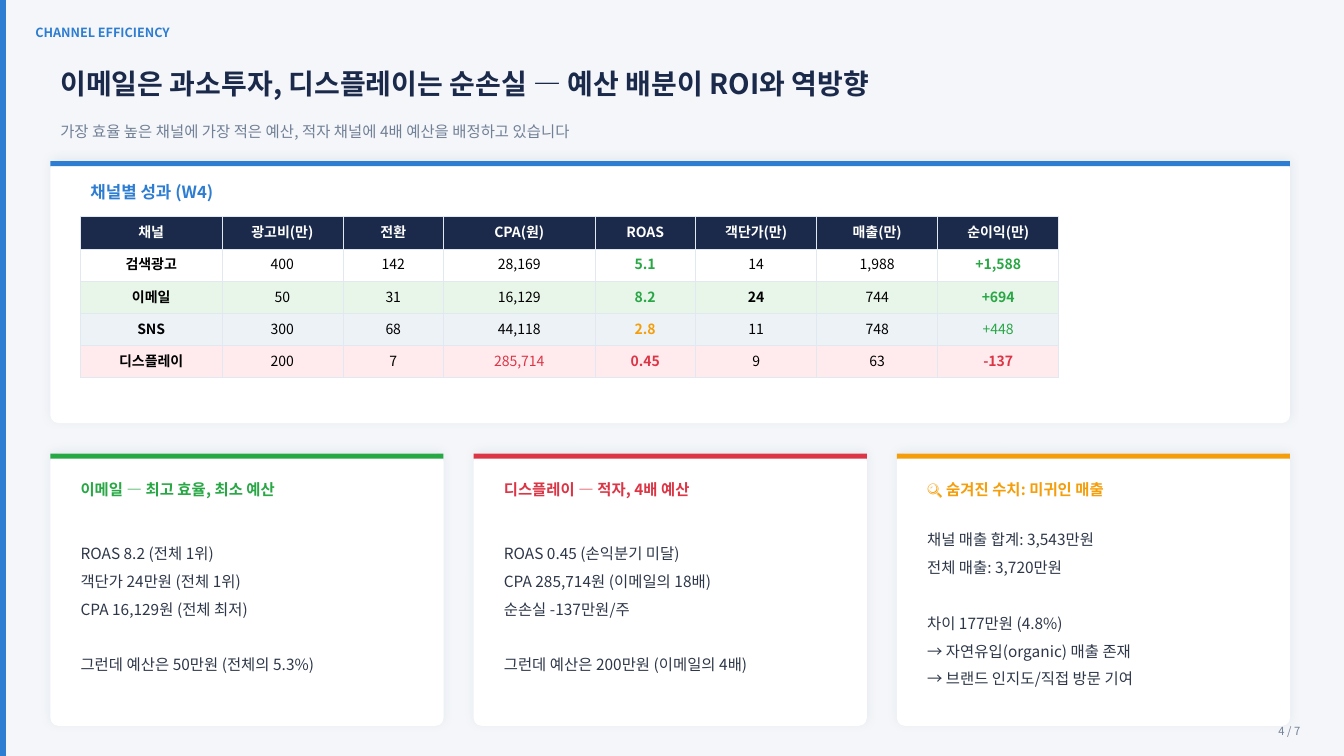
from lxml import etree
from pptx import Presentation
from pptx.dml.color import RGBColor
from pptx.enum.shapes import MSO_SHAPE
from pptx.enum.text import MSO_ANCHOR, PP_ALIGN
from pptx.oxml.ns import qn
from pptx.util import Cm, Pt

RECTANGLE = MSO_SHAPE.RECTANGLE
ROUNDED = MSO_SHAPE.ROUNDED_RECTANGLE
MIDDLE = MSO_ANCHOR.MIDDLE
LEFT, CENTER, RIGHT = PP_ALIGN.LEFT, PP_ALIGN.CENTER, PP_ALIGN.RIGHT

# Content
SECTION = "CHANNEL EFFICIENCY"
TITLE = "이메일은 과소투자, 디스플레이는 순손실 — 예산 배분이 ROI와 역방향"
SUBTITLE = "가장 효율 높은 채널에 가장 적은 예산, 적자 채널에 4배 예산을 배정하고 있습니다"
PAGE = "4 / 7"
TABLE_TITLE = "채널별 성과 (W4)"
HEADERS = ["채널", "광고비(만)", "전환", "CPA(원)", "ROAS", "객단가(만)", "매출(만)", "순이익(만)"]
CHANNELS = [  # row fill, values
    ("white", ["검색광고", "400", "142", "28,169", "5.1", "14", "1,988", "+1,588"]),
    ("pale_green", ["이메일", "50", "31", "16,129", "8.2", "24", "744", "+694"]),
    ("pale_blue", ["SNS", "300", "68", "44,118", "2.8", "11", "748", "+448"]),
    ("pale_red", ["디스플레이", "200", "7", "285,714", "0.45", "9", "63", "-137"]),
]
HIGHLIGHTS = {  # value: colour, bold
    "5.1": ("green", True), "8.2": ("green", True),
    "2.8": ("orange", True), "0.45": ("red", True),
    "24": ("black", True), "285,714": ("red", False),
    "+1,588": ("green", True), "+694": ("green", True),
    "+448": ("green", False), "-137": ("red", True),
}
CARDS = [  # accent, heading, groups of lines
    ("green", "이메일 — 최고 효율, 최소 예산", [
        ["ROAS 8.2 (전체 1위)", "객단가 24만원 (전체 1위)", "CPA 16,129원 (전체 최저)"],
        ["그런데 예산은 50만원 (전체의 5.3%)"]]),
    ("red", "디스플레이 — 적자, 4배 예산", [
        ["ROAS 0.45 (손익분기 미달)", "CPA 285,714원 (이메일의 18배)", "순손실 -137만원/주"],
        ["그런데 예산은 200만원 (이메일의 4배)"]]),
    ("orange", "🔍 숨겨진 수치: 미귀인 매출", [
        ["채널 매출 합계: 3,543만원", "전체 매출: 3,720만원"],
        ["차이 177만원 (4.8%)", "→ 자연유입(organic) 매출 존재", "→ 브랜드 인지도/직접 방문 기여"]]),
]

# Theme
THEME = {
    "font": "Noto Sans CJK KR",
    "colors": {
        "background": "F4F6F9", "blue": "2D7DD2", "navy": "1B2A4A",
        "gray": "718096", "text": "2D3748", "black": "000000",
        "white": "FFFFFF", "green": "28A745", "red": "DC3545",
        "orange": "F59E0B", "pale_green": "E8F5E9", "pale_blue": "EDF2F7",
        "pale_red": "FFEBEE", "border": "E2E8F0", "shadow": "CBD5E0",
    },
    "sizes": {"title": 20, "table_title": 12, "body": 11, "table": 10,
              "section": 9, "page": 8},
}

# Layout in centimetres
SLIDE_WIDTH, SLIDE_HEIGHT = 33.87, 19.05
MARGIN, CONTENT_WIDTH = 1.27, 31.24
ACCENT_HEIGHT, CORNER = 0.13, 0.2
TABLE_CARD_TOP, TABLE_CARD_HEIGHT = 4.06, 6.6
TABLE_LEFT, TABLE_TOP, ROW_HEIGHT = 2.03, 5.46, 0.81
COLUMN_WIDTHS = [3.56, 3.05, 2.54, 3.81, 2.54, 3.05, 3.05, 3.05]
CARD_TOP, CARD_HEIGHT, CARD_GAP, CARD_PADDING = 11.43, 6.86, 0.76, 0.51
CARD_WIDTH = (CONTENT_WIDTH - CARD_GAP * (len(CARDS) - 1)) / len(CARDS)
LINE_SPACING, GROUP_GAP = 1.5, 20


def color(name):
    return RGBColor.from_string(THEME["colors"][name])


def format_paragraph(paragraph, size, color_name, bold=False, alignment=LEFT):
    paragraph.alignment = alignment
    for run in paragraph.runs:
        run.font.name = THEME["font"]
        run.font.size = Pt(THEME["sizes"][size])
        run.font.bold = bold
        run.font.color.rgb = color(color_name)
        east_asian = etree.SubElement(run.font._element, qn("a:ea"))
        east_asian.set("typeface", THEME["font"])


def add_text(slide, box, groups, size, color_name, bold=False, alignment=LEFT, spacing=None):
    text_frame = slide.shapes.add_textbox(*map(Cm, box)).text_frame
    text_frame.word_wrap = True
    text_frame.vertical_anchor = MIDDLE
    text_frame.text = "\n".join(line for group in groups for line in group)
    for paragraph in text_frame.paragraphs:
        format_paragraph(paragraph, size, color_name, bold, alignment)
        if spacing:
            paragraph.line_spacing = spacing
    start = 0
    for group in groups[:-1]:
        start += len(group)
        text_frame.paragraphs[start].space_before = Pt(GROUP_GAP)


def add_block(slide, kind, box, fill):
    shape = slide.shapes.add_shape(kind, *map(Cm, box))
    shape.shadow.inherit = False
    shape.fill.solid()
    shape.fill.fore_color.rgb = color(fill)
    shape.line.fill.background()
    return shape


def add_card(slide, left, top, width, height, accent):
    card = add_block(slide, ROUNDED, (left, top, width, height), "white")
    card.adjustments[0] = CORNER / height
    effects = card._element.spPr.find(qn("a:effectLst"))
    shadow = etree.SubElement(effects, qn("a:outerShdw"), blurRad=str(Pt(6)),
                              dist=str(Pt(2)), dir="16200000", rotWithShape="0")
    tint = etree.SubElement(shadow, qn("a:srgbClr"), val=THEME["colors"]["shadow"])
    etree.SubElement(tint, qn("a:alpha"), val="35000")
    add_block(slide, RECTANGLE, (left, top, width, ACCENT_HEIGHT), accent)


def style_cell(cell, text, fill, color_name, bold):
    cell.text_frame.text = text
    format_paragraph(cell.text_frame.paragraphs[0], "table", color_name, bold, CENTER)
    properties = cell._tc.get_or_add_tcPr()
    for side in ("lnL", "lnR", "lnT", "lnB"):
        line = etree.SubElement(properties, qn(f"a:{side}"), w=str(Pt(0.5)))
        solid = etree.SubElement(line, qn("a:solidFill"))
        etree.SubElement(solid, qn("a:srgbClr"), val=THEME["colors"]["border"])
    cell.fill.solid()
    cell.fill.fore_color.rgb = color(fill)


def add_channel_table(slide):
    rows = [("navy", HEADERS)] + CHANNELS
    table = slide.shapes.add_table(
        len(rows), len(HEADERS), Cm(TABLE_LEFT), Cm(TABLE_TOP),
        Cm(sum(COLUMN_WIDTHS)), Cm(ROW_HEIGHT * len(rows))).table
    for column, width in zip(table.columns, COLUMN_WIDTHS):
        column.width = Cm(width)
    for row_index, (fill, values) in enumerate(rows):
        table.rows[row_index].height = Cm(ROW_HEIGHT)
        for column_index, value in enumerate(values):
            if row_index == 0:
                style = ("white", True)
            else:
                style = HIGHLIGHTS.get(value, ("black", column_index == 0))
            style_cell(table.cell(row_index, column_index), value, fill, *style)


def main():
    presentation = Presentation()
    presentation.slide_width = Cm(SLIDE_WIDTH)
    presentation.slide_height = Cm(SLIDE_HEIGHT)
    slide = presentation.slides.add_slide(presentation.slide_layouts[6])
    slide.background.fill.solid()
    slide.background.fill.fore_color.rgb = color("background")

    # Side stripe, headings and page number
    add_block(slide, RECTANGLE, (0, 0, 0.15, SLIDE_HEIGHT), "blue")
    add_text(slide, (0.64, 0.46, 7.62, 0.71), [[SECTION]], "section", "blue", True)
    add_text(slide, (MARGIN, 1.4, CONTENT_WIDTH, 1.4), [[TITLE]], "title", "navy", True)
    add_text(slide, (29.97, 18.03, 3.05, 0.76), [[PAGE]], "page", "gray", alignment=RIGHT)
    add_text(slide, (MARGIN, 2.92, 30.48, 0.76), [[SUBTITLE]], "body", "gray")

    # Channel table
    add_card(slide, MARGIN, TABLE_CARD_TOP, CONTENT_WIDTH, TABLE_CARD_HEIGHT, "blue")
    add_text(slide, (TABLE_LEFT, 4.45, 12.7, 0.76), [[TABLE_TITLE]], "table_title", "blue", True)
    add_channel_table(slide)

    # Finding cards
    text_width = CARD_WIDTH - 2 * CARD_PADDING
    for index, (accent, heading, groups) in enumerate(CARDS):
        left = MARGIN + index * (CARD_WIDTH + CARD_GAP)
        text_left = left + CARD_PADDING
        add_card(slide, left, CARD_TOP, CARD_WIDTH, CARD_HEIGHT, accent)
        add_text(slide, (text_left, CARD_TOP + 0.51, text_width, 0.76),
                 [[heading]], "body", accent, True)
        add_text(slide, (text_left, CARD_TOP + 1.52, text_width, 4.57),
                 groups, "body", "text", spacing=LINE_SPACING)

    presentation.save("out.pptx")


if __name__ == "__main__":
    main()
